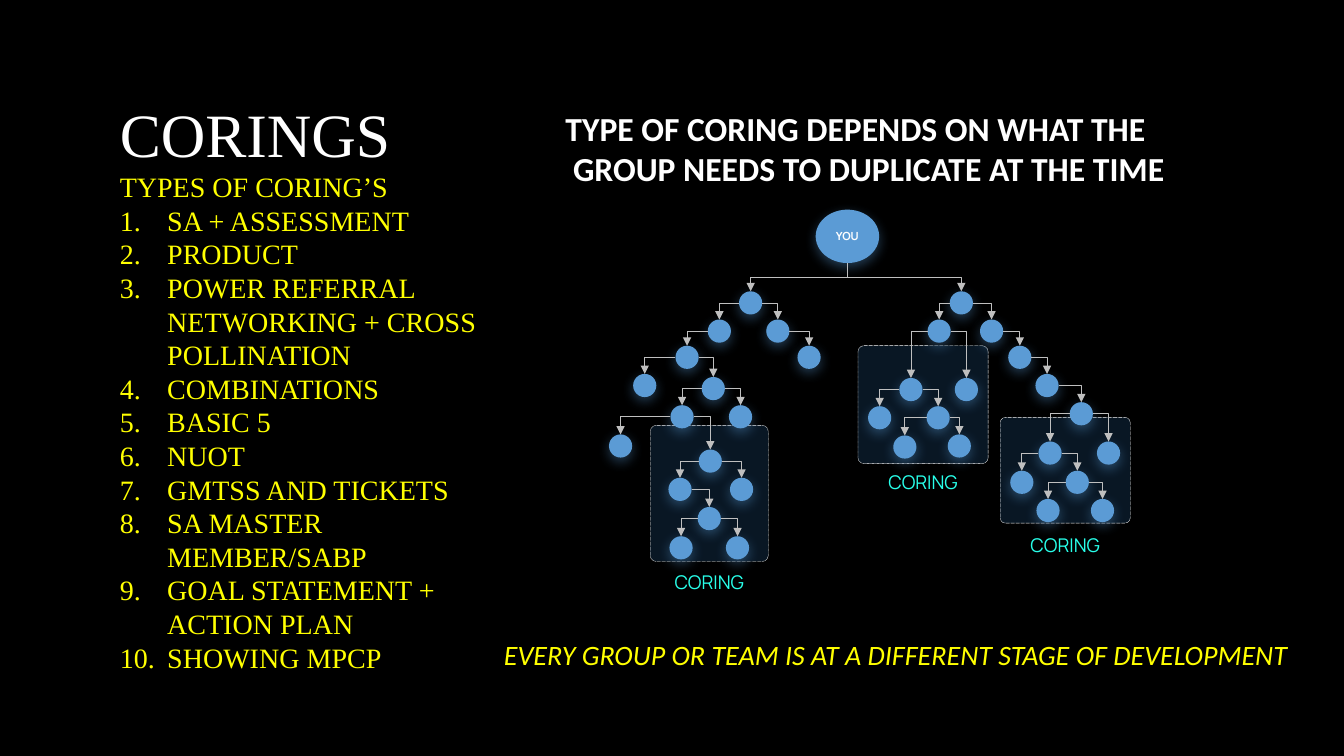
import lxml.etree
import pptx
import pptx.dml.color
import pptx.enum.dml
import pptx.enum.shapes
import pptx.enum.text
import pptx.oxml.ns
import pptx.util

Inches = pptx.util.Inches
Pt = pptx.util.Pt
SHAPE = pptx.enum.shapes.MSO_SHAPE
ALIGN = pptx.enum.text.PP_ALIGN

COLORS = {
    "black": "000000", "white": "FFFFFF", "yellow": "FFFF00", "aqua": "28FEE9",
    "node": "5B9BD5", "navy": "1F4E79", "gray": "BFBFBF",
}
DOT = 0.23
YOU = (8.09, 2.08, 0.63, 0.53)
# Each key is the route of left and right turns from YOU; its parent is the key less one turn.
TREE = {
    "L": (7.33, 2.89), "LL": (7.02, 3.17), "LR": (7.6, 3.17), "LRR": (7.91, 3.43),
    "LLL": (6.7, 3.43), "LLLL": (6.28, 3.71), "LLLR": (6.96, 3.74),
    "LLLRL": (6.65, 4.02), "LLLRR": (7.23, 4.02),
    "LLLRLL": (6.04, 4.31), "LLLRLR": (6.93, 4.46),
    "LLLRLRL": (6.63, 4.74), "LLLRLRR": (7.24, 4.74), "LLLRLRLR": (6.92, 5.03),
    "LLLRLRLRL": (6.64, 5.32), "LLLRLRLRR": (7.2, 5.32),
    "R": (9.42, 2.89), "RL": (9.2, 3.17), "RR": (9.72, 3.17),
    "RLL": (8.92, 3.75), "RLR": (9.47, 3.75), "RLLL": (8.61, 4.03),
    "RLLR": (9.19, 4.03), "RLLRL": (8.86, 4.32), "RLLRR": (9.4, 4.31),
    "RRR": (10, 3.43), "RRRR": (10.27, 3.71), "RRRRR": (10.61, 3.99),
    "RRRRRL": (10.3, 4.38), "RRRRRR": (10.88, 4.38),
    "RRRRRLL": (10.02, 4.67), "RRRRRLR": (10.57, 4.67),
    "RRRRRLRL": (10.28, 4.95), "RRRRRLRR": (10.82, 4.95),
}
# Panel place and the top of its label
CORES = [
    ((6.45, 4.22, 1.17, 1.35), 5.61),
    ((8.51, 3.43, 1.29, 1.17), 4.62),
    ((9.92, 4.14, 1.29, 1.05), 5.24),
]
TYPES = [
    "SA + ASSESSMENT", "PRODUCT", "POWER REFERRAL NETWORKING + CROSS POLLINATION",
    "COMBINATIONS", "BASIC 5", "NUOT", "GMTSS AND TICKETS", "SA MASTER MEMBER/SABP",
    "GOAL STATEMENT + ACTION PLAN", "SHOWING MPCP",
]
TAG = {"name": "Manrope", "size": Pt(13.5), "color": "aqua"}
ROOT = {"name": "Manrope", "size": Pt(8), "bold": True, "color": "white"}
TITLE = {"name": "Times New Roman", "size": Pt(44), "color": "white"}
LIST = {"name": "Times New Roman", "size": Pt(20), "color": "yellow"}
HEAD = {"name": "Calibri", "size": Pt(24), "bold": True, "color": "white"}
FOOT = {"name": "Calibri", "size": Pt(20), "italic": True, "color": "yellow"}


def hue(name):
    return pptx.dml.color.RGBColor.from_string(COLORS[name])


def add(node, tag, **attrs):
    """Append an XML child and return it."""
    return lxml.etree.SubElement(node, pptx.oxml.ns.qn(tag), attrs)


class Deck:
    """Holds the style and the current slide."""

    def __init__(self):
        self.file = pptx.Presentation()
        self.file.slide_width = Inches(13.33)
        self.file.slide_height = Inches(7.5)
        self.slide = self.file.slides.add_slide(self.file.slide_layouts[6])
        fill = self.slide.background.fill
        fill.solid()
        fill.fore_color.rgb = hue("black")

    def fill_text(self, frame, lines, align=ALIGN.LEFT, wrap=True):
        """Fill a frame with (text, format, numbered) lines."""
        frame.word_wrap = wrap
        for i, (text, style, numbered) in enumerate(lines):
            para = frame.paragraphs[0] if i == 0 else frame.add_paragraph()
            para.alignment = align
            run = para.add_run()
            run.text = text
            for key, value in style.items():
                if key == "color":
                    run.font.color.rgb = hue(value)
                else:
                    setattr(run.font, key, value)
            if numbered:
                props = para._p.get_or_add_pPr()
                props.set("marL", str(Inches(0.47)))
                props.set("indent", str(-Inches(0.47)))
                add(props, "a:buFont", typeface="+mj-lt")
                add(props, "a:buAutoNum", type="arabicPeriod")

    def text(self, place, lines, **kind):
        box = self.slide.shapes.add_textbox(*map(Inches, place))
        self.fill_text(box.text_frame, lines, **kind)
        box.text_frame.auto_size = pptx.enum.text.MSO_AUTO_SIZE.SHAPE_TO_FIT_TEXT

    def shape(self, kind, place, color):
        item = self.slide.shapes.add_shape(kind, *map(Inches, place))
        item.fill.solid()
        item.fill.fore_color.rgb = hue(color)
        item.line.fill.background()
        item.shadow.inherit = False
        return item

    def panel(self, place):
        item = self.shape(SHAPE.ROUNDED_RECTANGLE, place, "navy")
        item.adjustments[0] = 0.05
        tint = item._element.spPr.find(".//" + pptx.oxml.ns.qn("a:srgbClr"))
        add(tint, "a:alpha", val="30000")
        item.line.color.rgb = hue("white")
        item.line.width = Pt(0.25)
        item.line.dash_style = pptx.enum.dml.MSO_LINE.ROUND_DOT

    def node(self, place):
        item = self.shape(SHAPE.OVAL, place, "node")
        effects = item._element.spPr.find(pptx.oxml.ns.qn("a:effectLst"))
        glow = add(effects, "a:outerShdw", blurRad=str(Pt(9)), dist=str(Pt(3)),
                   dir="5400000", algn="t", rotWithShape="0")
        add(add(glow, "a:srgbClr", val=COLORS["node"]), "a:alpha", val="40000")
        return item

    def arrow(self, start, end, ends, preset, turn=0):
        """Draw an elbow arrow; ends holds the (shape, site) pair of each end."""
        line = self.slide.shapes.add_connector(
            pptx.enum.shapes.MSO_CONNECTOR.ELBOW, *map(Inches, start + end))
        line.line.color.rgb = hue("gray")
        line.line.width = Pt(0.5)
        props = line._element.spPr
        props.find(pptx.oxml.ns.qn("a:prstGeom")).set("prst", preset)
        props.find(pptx.oxml.ns.qn("a:xfrm")).set("rot", str(turn * 60000))
        add(props.find(pptx.oxml.ns.qn("a:ln")), "a:tailEnd", type="triangle")
        add(props, "a:effectLst")
        links = line._element.nvCxnSpPr.cNvCxnSpPr
        for tag, (item, site) in zip(("a:stCxn", "a:endCxn"), ends):
            add(links, tag, id=str(item.shape_id), idx=str(site))

    def branch(self, route, dots):
        """Join a dot to its parent, from the parent's side or from under YOU."""
        x, y = TREE[route]
        tip = (x + DOT / 2, y)
        right = route[-1] == "R"
        parent, goal = dots[route[:-1]], (dots[route], 0)
        if len(route) > 1:
            px, py = TREE[route[:-1]]
            start = (px + DOT * right, py + DOT / 2)
            self.arrow(start, tip, ((parent, 6 if right else 2), goal), "bentConnector2")
            return
        left, top, width, height = YOU
        base = (left + width / 2, top + height)
        mid = [(a + b) / 2 for a, b in zip(base, tip)]
        run, drop = abs(tip[0] - base[0]) / 2, (tip[1] - base[1]) / 2
        if right:
            drop = -drop
        self.arrow((mid[0] - drop, mid[1] - run), (mid[0] + drop, mid[1] + run),
                   ((parent, 4), goal), "bentConnector3", 270 if right else 90)


def main():
    deck = Deck()
    for place, top in CORES:
        deck.panel(place)
        deck.text((place[0], top, place[2], 0.33), [("CORING", TAG, False)],
                  align=ALIGN.CENTER)

    dots = {"": deck.node(YOU)}
    frame = dots[""].text_frame
    frame.vertical_anchor = pptx.enum.text.MSO_ANCHOR.MIDDLE
    deck.fill_text(frame, [("YOU", ROOT, False)], align=ALIGN.CENTER, wrap=False)
    for route, (x, y) in TREE.items():
        dots[route] = deck.node((x, y, DOT, DOT))
    for route in TREE:
        deck.branch(route, dots)

    deck.text((1.09, 0.9, 3.8, 6.19),
              [("CORINGS", TITLE, False), ("TYPES OF CORING’S", LIST, False)]
              + [(kind, LIST, True) for kind in TYPES])
    deck.text((5.51, 1.02, 6.19, 0.91),
              [("TYPE OF CORING DEPENDS ON WHAT THE", HEAD, False),
               (" GROUP NEEDS TO DUPLICATE AT THE TIME", HEAD, False)], wrap=False)
    deck.text((4.9, 6.28, 8.04, 0.44),
              [("EVERY GROUP OR TEAM IS AT A DIFFERENT STAGE OF DEVELOPMENT", FOOT, False)],
              wrap=False)
    deck.file.save("out.pptx")


if __name__ == "__main__":
    main()
